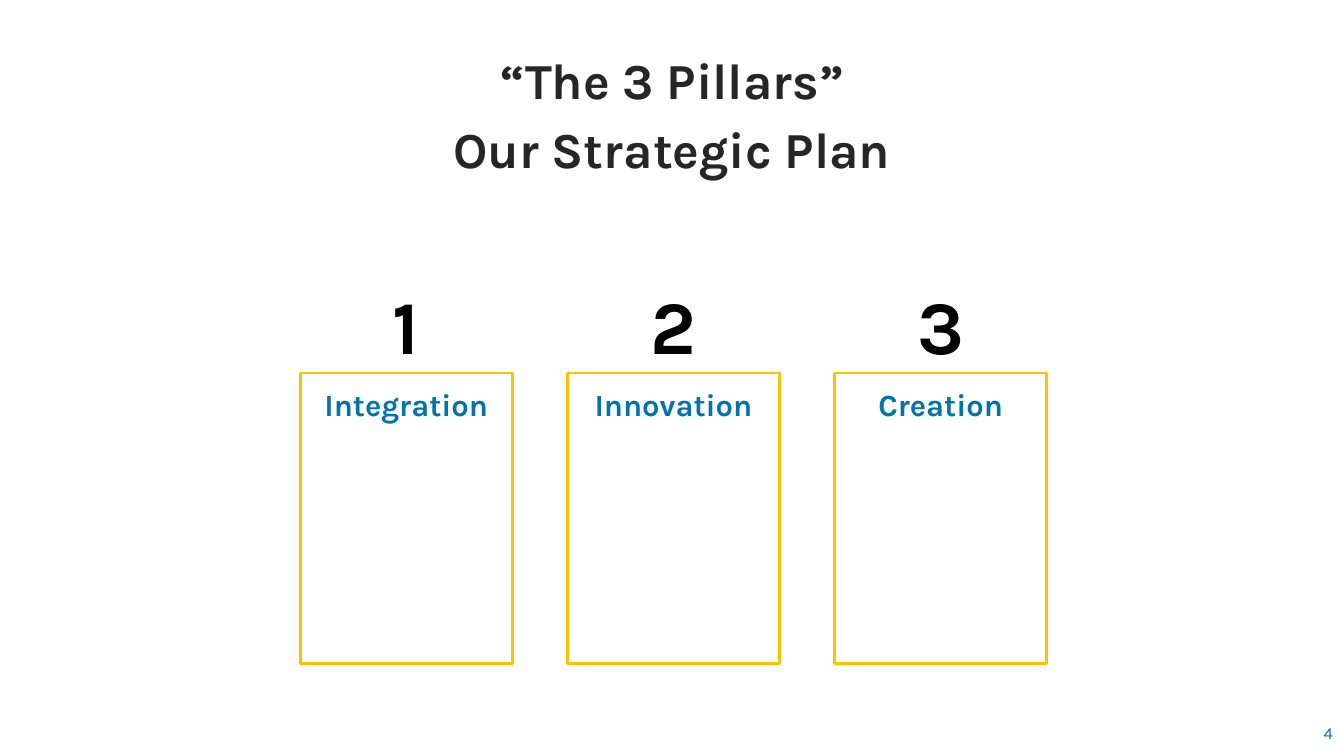
from dataclasses import dataclass

from pptx import Presentation
from pptx.dml.color import RGBColor
from pptx.enum.shapes import MSO_SHAPE
from pptx.enum.text import MSO_ANCHOR, MSO_AUTO_SIZE as AutoSize, PP_ALIGN as Align
from pptx.util import Inches, Pt


@dataclass(frozen=True)
class Theme:
    font: str = "Karla"
    blue: RGBColor = RGBColor(0x00, 0x74, 0xAF)
    gold: RGBColor = RGBColor(0xFF, 0xC0, 0x00)
    dark: RGBColor = RGBColor(0x26, 0x26, 0x26)
    black: RGBColor = RGBColor(0, 0, 0)
    title_size: int = 36
    number_size: int = 54
    label_size: int = 22
    page_size: int = 12


THEME = Theme()
SLIDE_WIDTH = 13.33
PILLARS = ["Integration", "Innovation", "Creation"]
PILLAR_LEFT, PILLAR_STEP = 2.98, 2.65
PILLAR_WIDTH = 2.1
TEXT_OVERHANG = 0.25  # text boxes reach past the frame on both sides


def add_run(paragraph, text, size, color, bold):
    run = paragraph.add_run()
    run.text = text
    run.font.name = THEME.font
    run.font.size = Pt(size)
    run.font.bold = bold
    run.font.color.rgb = color


def add_heading(slide, box, lines, size, color, side_inset=0.1):
    """Bold centred text, one paragraph per line."""
    frame = slide.shapes.add_textbox(*map(Inches, box)).text_frame
    frame.word_wrap = True
    frame.auto_size = AutoSize.SHAPE_TO_FIT_TEXT
    frame.margin_left = frame.margin_right = Inches(side_inset)
    for index, line in enumerate(lines):
        paragraph = frame.add_paragraph() if index else frame.paragraphs[0]
        paragraph.alignment = Align.CENTER
        paragraph.line_spacing = 0.9
        paragraph.space_before = Pt(10)
        add_run(paragraph, line, size, color, bold=True)


def add_frame(slide, left):
    frame = slide.shapes.add_shape(
        MSO_SHAPE.RECTANGLE, Inches(left), Inches(3.7), Inches(PILLAR_WIDTH), Inches(2.88)
    )
    frame.shadow.inherit = False
    frame.fill.background()
    frame.line.color.rgb = THEME.gold
    frame.line.width = Pt(2)


def add_pillar(slide, number, name):
    left = PILLAR_LEFT + (number - 1) * PILLAR_STEP
    text_left = left - TEXT_OVERHANG
    text_width = PILLAR_WIDTH + 2 * TEXT_OVERHANG
    add_heading(slide, (text_left, 3.82, text_width, 0.43), [name],
                THEME.label_size, THEME.blue, side_inset=0.16)
    add_heading(slide, (text_left, 2.82, text_width, 0.92), [str(number)],
                THEME.number_size, THEME.black, side_inset=0.16)
    add_frame(slide, left)


def add_page_number(slide, number):
    box = slide.shapes.add_textbox(Inches(12.85), Inches(7.07), Inches(0.47), Inches(0.4))
    frame = box.text_frame
    frame.word_wrap = False
    frame.vertical_anchor = MSO_ANCHOR.MIDDLE
    paragraph = frame.paragraphs[0]
    paragraph.alignment = Align.RIGHT
    add_run(paragraph, str(number), THEME.page_size, THEME.blue, bold=False)


def main():
    deck = Presentation()
    deck.slide_width, deck.slide_height = Inches(SLIDE_WIDTH), Inches(7.5)
    slide = deck.slides.add_slide(deck.slide_layouts[6])

    # Title
    add_heading(slide, (0, 0.51, SLIDE_WIDTH, 1.33),
                ["“The 3 Pillars”", "Our Strategic Plan"], THEME.title_size, THEME.dark)

    # Numbered pillars
    for number, name in enumerate(PILLARS, start=1):
        add_pillar(slide, number, name)

    # Footer
    add_page_number(slide, 4)

    deck.save("out.pptx")


if __name__ == "__main__":
    main()
